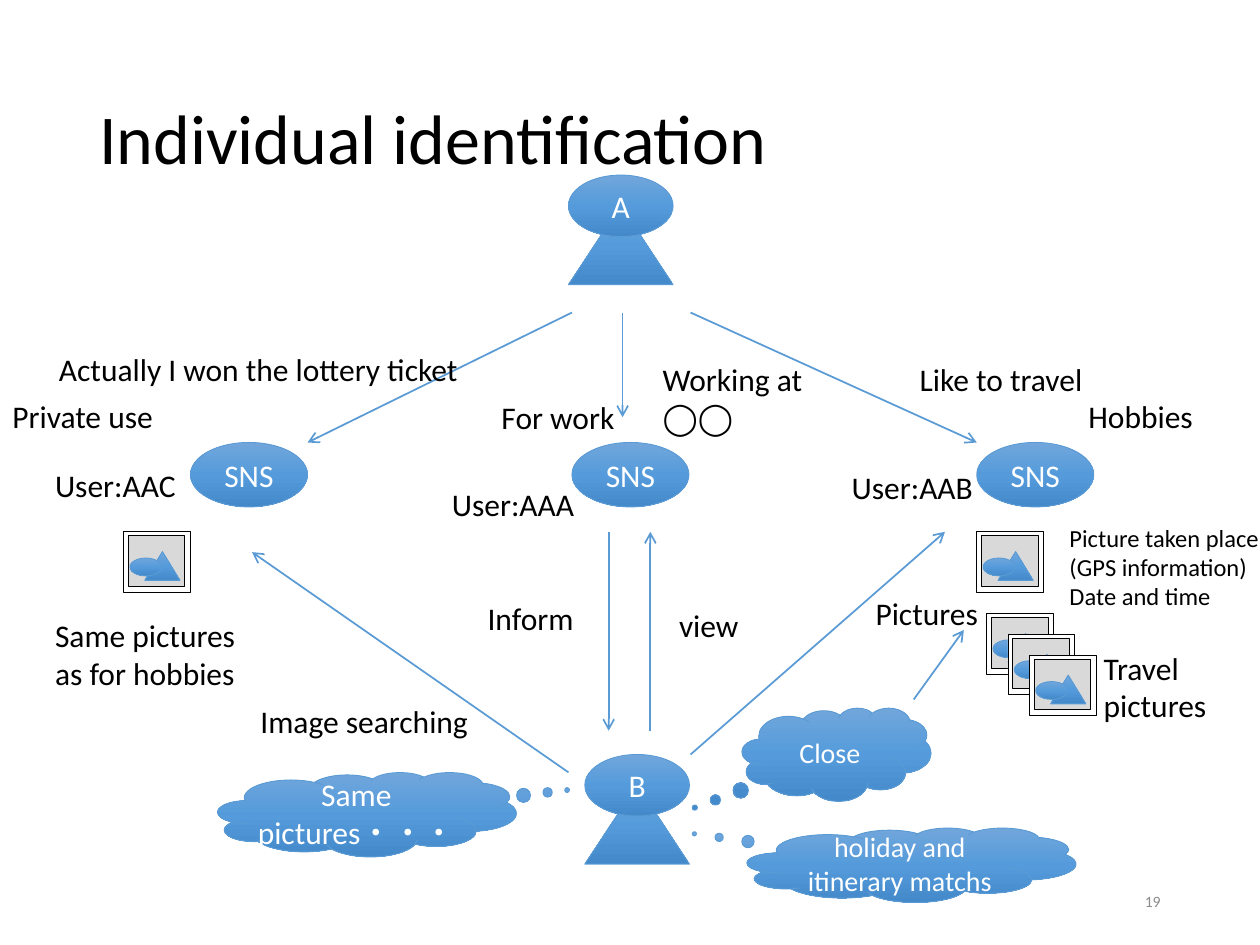
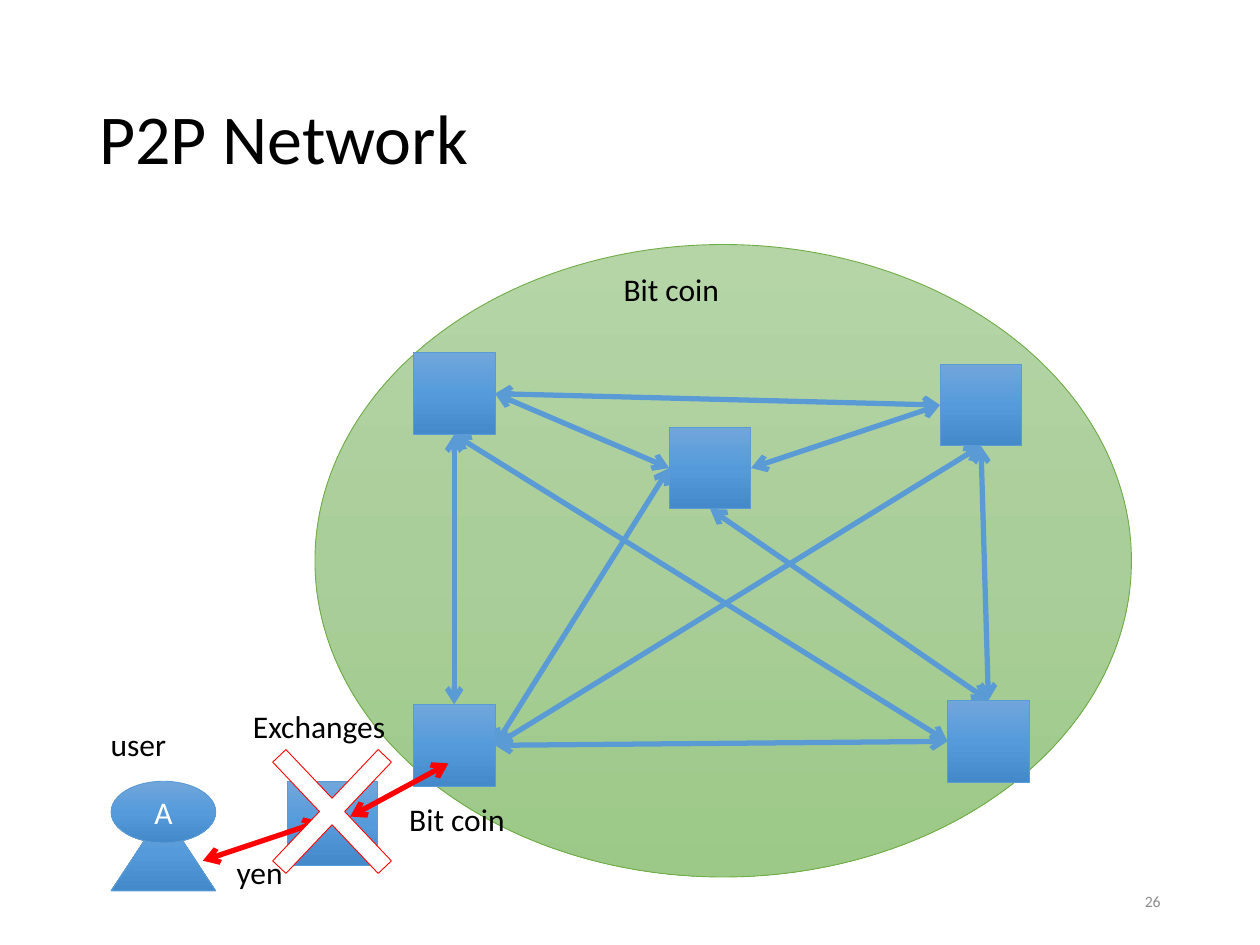
from copy import deepcopy

from lxml import etree
from pptx import Presentation
from pptx.dml.color import RGBColor
from pptx.enum.shapes import MSO_CONNECTOR, MSO_SHAPE
from pptx.enum.text import MSO_ANCHOR, MSO_AUTO_SIZE, PP_ALIGN
from pptx.oxml.ns import qn
from pptx.util import Cm, Pt

RECT = MSO_SHAPE.RECTANGLE
OVAL = MSO_SHAPE.OVAL
PEAK = MSO_SHAPE.ISOSCELES_TRIANGLE
CLOUD = MSO_SHAPE.CLOUD_CALLOUT
CROSS = MSO_SHAPE.MATH_MULTIPLY
LINE = MSO_CONNECTOR.STRAIGHT
MIDDLE = MSO_ANCHOR.MIDDLE
TOP_SIDE = MSO_ANCHOR.TOP
LEFT = PP_ALIGN.LEFT
CENTER = PP_ALIGN.CENTER
RIGHT = PP_ALIGN.RIGHT
GROW = MSO_AUTO_SIZE.SHAPE_TO_FIT_TEXT
FIXED = MSO_AUTO_SIZE.NONE

FONT = "Calibri"
COLORS = {
    "black": "000000",
    "white": "FFFFFF",
    "gray": "8C8C8C",
    "pale": "D9D9D9",
    "blue": "5B9BD5",
    "green": "70AD47",
    "red": "FF0000",
}
BLENDS = {
    "blue": ("71A6DB", "559BDB", "448ACA"),
    "green": ("B5D5A7", "AACE9A", "9CC987"),
}
SIDES = {"top": 0, "left": 1, "bottom": 2, "right": 3}


def rgb(name):
    return RGBColor.from_string(COLORS[name])


def write(frame, text, size=18, color="black", align=LEFT, anchor=TOP_SIDE,
          wrap=True, grow=False, space=None):
    frame.word_wrap = wrap
    frame.auto_size = GROW if grow else FIXED
    frame.vertical_anchor = anchor
    frame.text = text
    for para in frame.paragraphs:
        para.alignment = align
        if space:
            para.line_spacing = space
        for run in para.runs:
            run.font.size = Pt(size)
            run.font.name = FONT
            run.font.color.rgb = rgb(color)


def add_text(slide, text, x, y, w, h, **style):
    box = slide.shapes.add_textbox(Cm(x), Cm(y), Cm(w), Cm(h))
    write(box.text_frame, text, **style)


def add_label(slide, text, x, y, w, size=18):
    rows = text.count("\n") + 1
    high = rows * size * 0.0423 + 0.25
    add_text(slide, text, x, y, w, high, size=size, wrap=False, grow=True)


def blend(shape, name):
    fill = shape.fill
    fill.gradient()
    fill.gradient_angle = 270
    stops = shape._element.spPr.find(".//" + qn("a:gsLst"))
    stops.append(deepcopy(stops[0]))
    for i, (stop, tone) in enumerate(zip(fill.gradient_stops, BLENDS[name])):
        stop.color.rgb = RGBColor.from_string(tone)
        stop.position = i / 2


def add_form(slide, kind, x, y, w, h, fill="blue", line="blue", text="",
             size=18, wrap=True, adjust=()):
    form = slide.shapes.add_shape(kind, Cm(x), Cm(y), Cm(w), Cm(h))
    form.shadow.inherit = False
    for i, value in enumerate(adjust):
        form.adjustments[i] = value
    if fill in BLENDS:
        blend(form, fill)
    else:
        form.fill.solid()
        form.fill.fore_color.rgb = rgb(fill)
    form.line.color.rgb = rgb(line)
    form.line.width = Pt(0.5)
    if text:
        write(form.text_frame, text, size=size, color="white", align=CENTER,
              anchor=MIDDLE, wrap=wrap)
    return form


def add_arrow(slide, x1=0, y1=0, x2=0, y2=0, color="blue", width=1,
              ends=("tail",), link=None):
    arrow = slide.shapes.add_connector(LINE, Cm(x1), Cm(y1), Cm(x2), Cm(y2))
    if link:
        first, out, last, into = link
        arrow.begin_connect(first, SIDES[out])
        arrow.end_connect(last, SIDES[into])
    arrow.line.color.rgb = rgb(color)
    arrow.line.width = Pt(width)
    props = arrow._element.spPr
    for end in ends:
        etree.SubElement(props.find(qn("a:ln")), qn(f"a:{end}End"), type="arrow")
    etree.SubElement(props, qn("a:effectLst"))


def add_double(slide, *ends, **style):
    add_arrow(slide, *ends, width=3, ends=("head", "tail"), **style)


def add_person(slide, name, x, y):
    add_form(slide, PEAK, x, y + 0.61, 2.11, 1.6)
    add_form(slide, OVAL, x, y, 2.11, 1.24, text=name)


def add_photo(slide, x, y):
    add_form(slide, RECT, x, y, 1.35, 1.22, fill="white", line="black")
    add_form(slide, RECT, x + 0.1, y + 0.08, 1.14, 1.02, fill="pale", line="black")
    add_form(slide, PEAK, x + 0.43, y + 0.4, 0.71, 0.58)
    add_form(slide, OVAL, x + 0.13, y + 0.53, 0.64, 0.36)


def add_heads(slide, title, number):
    add_text(slide, title, 1.75, 1.02, 21.9, 3.68, size=40, anchor=MIDDLE, space=0.9)
    add_text(slide, str(number), 17.93, 17.65, 5.72, 1.02, size=9, color="gray",
             align=RIGHT, anchor=MIDDLE)


def build_users(slide):
    add_heads(slide, "Individual identification", 19)
    add_person(slide, "A", 11.46, 3.53)
    add_person(slide, "B", 11.79, 15.21)
    for x in (3.84, 11.53, 19.69):
        add_form(slide, OVAL, x, 8.92, 2.36, 1.3, text="SNS")

    for ends in (
        (11.53, 6.3, 6.2, 8.92),
        (12.55, 6.3, 12.55, 8.41),
        (13.92, 6.3, 19.69, 8.92),
        (12.27, 10.72, 12.27, 14.73),
        (13.11, 14.73, 13.11, 10.72),
        (13.92, 15.21, 19.05, 10.72),
        (18.42, 14.1, 19.43, 12.7),
        (11.46, 15.57, 5.08, 11.13),
    ):
        add_arrow(slide, *ends)

    add_photo(slide, 2.49, 10.72)
    add_photo(slide, 19.69, 10.72)
    for i in range(3):
        add_photo(slide, 19.89 + i * 0.43, 12.37 + i * 0.42)

    for label in (
        ("For work", 9.86, 7.9, 2.82),
        ("Hobbies", 21.69, 7.87, 2.64),
        ("Private use", 0, 7.87, 3.4),
        ("Working at\n◯◯", 13.11, 7.14, 3.4),
        ("Like to travel", 18.29, 7.14, 3.89),
        ("Actually I won the lottery ticket", 0.94, 6.93, 8.66),
        ("Inform", 9.58, 11.94, 2.29),
        ("view", 13.44, 12.09, 1.73),
        ("User:AAA", 8.86, 9.65, 3),
        ("User:AAB", 16.92, 9.3, 2.97),
        ("User:AAC", 0.86, 9.27, 2.97),
        ("Pictures", 17.4, 11.84, 2.62),
        ("Picture taken place\n(GPS information)\nDate and time", 21.31, 10.41, 4.39, 14),
        ("Travel\npictures", 22, 12.95, 2.62),
        ("Same pictures\nas for hobbies", 0.86, 12.29, 4.32),
        ("Image searching", 5, 14.02, 4.75),
    ):
        add_label(slide, *label)

    for text, size, wrap, place, adjust in (
        ("Close", 16, True, (14.96, 14.27, 3.81, 1.88), (-0.75, 0.57)),
        ("holiday and itinerary matchs", 16, True, (15.06, 16.69, 6.63, 1.5),
         (-0.66, -0.42)),
        ("Same\vpictures・・・", 18, False, (4.39, 15.57, 6.02, 1.7), (0.67, -0.29)),
    ):
        add_form(slide, CLOUD, *place, text=text, size=size, wrap=wrap, adjust=adjust)


def build_network(slide):
    add_form(slide, OVAL, 6.35, 4.93, 16.46, 12.75, fill="green", line="green")
    add_heads(slide, "P2P Network", 26)
    spots = {
        "nw": (8.33, 7.11),
        "se": (19.1, 14.12),
        "mid": (13.49, 8.61),
        "sw": (8.33, 14.2),
        "ne": (18.95, 7.34),
    }
    nodes = {key: add_form(slide, RECT, x, y, 1.65, 1.65)
             for key, (x, y) in spots.items()}
    for first, out, last, into in (
        ("nw", "right", "ne", "left"),
        ("mid", "right", "ne", "left"),
        ("nw", "right", "mid", "left"),
        ("nw", "bottom", "sw", "top"),
        ("sw", "right", "mid", "left"),
        ("sw", "right", "se", "left"),
        ("se", "top", "ne", "bottom"),
        ("mid", "bottom", "se", "top"),
        ("nw", "bottom", "se", "left"),
        ("sw", "right", "ne", "bottom"),
    ):
        add_double(slide, link=(nodes[first], out, nodes[last], into))

    add_form(slide, RECT, 5.79, 15.75, 1.83, 1.7)
    add_person(slide, "A", 2.24, 15.75)
    add_double(slide, 4.09, 17.35, 6.45, 16.56, color="red")
    add_double(slide, 7.06, 16.46, 9.04, 15.39, color="red")
    for label in (
        ("Bit coin", 12.32, 5.31, 2.46),
        ("user", 1.98, 14.48, 1.65),
        ("Exchanges", 4.85, 14.12, 3.23),
        ("yen", 4.52, 17.07, 1.45),
        ("Bit coin", 8, 16, 2.46),
    ):
        add_label(slide, *label)
    add_form(slide, CROSS, 4.65, 14.2, 4.09, 4.32, fill="white", line="red",
             adjust=(0.09,))


def main():
    deck = Presentation()
    deck.slide_width = Cm(25.4)
    deck.slide_height = Cm(19.05)
    blank = deck.slide_layouts[6]
    for build in (build_users, build_network):
        build(deck.slides.add_slide(blank))
    deck.save("out.pptx")


if __name__ == "__main__":
    main()
